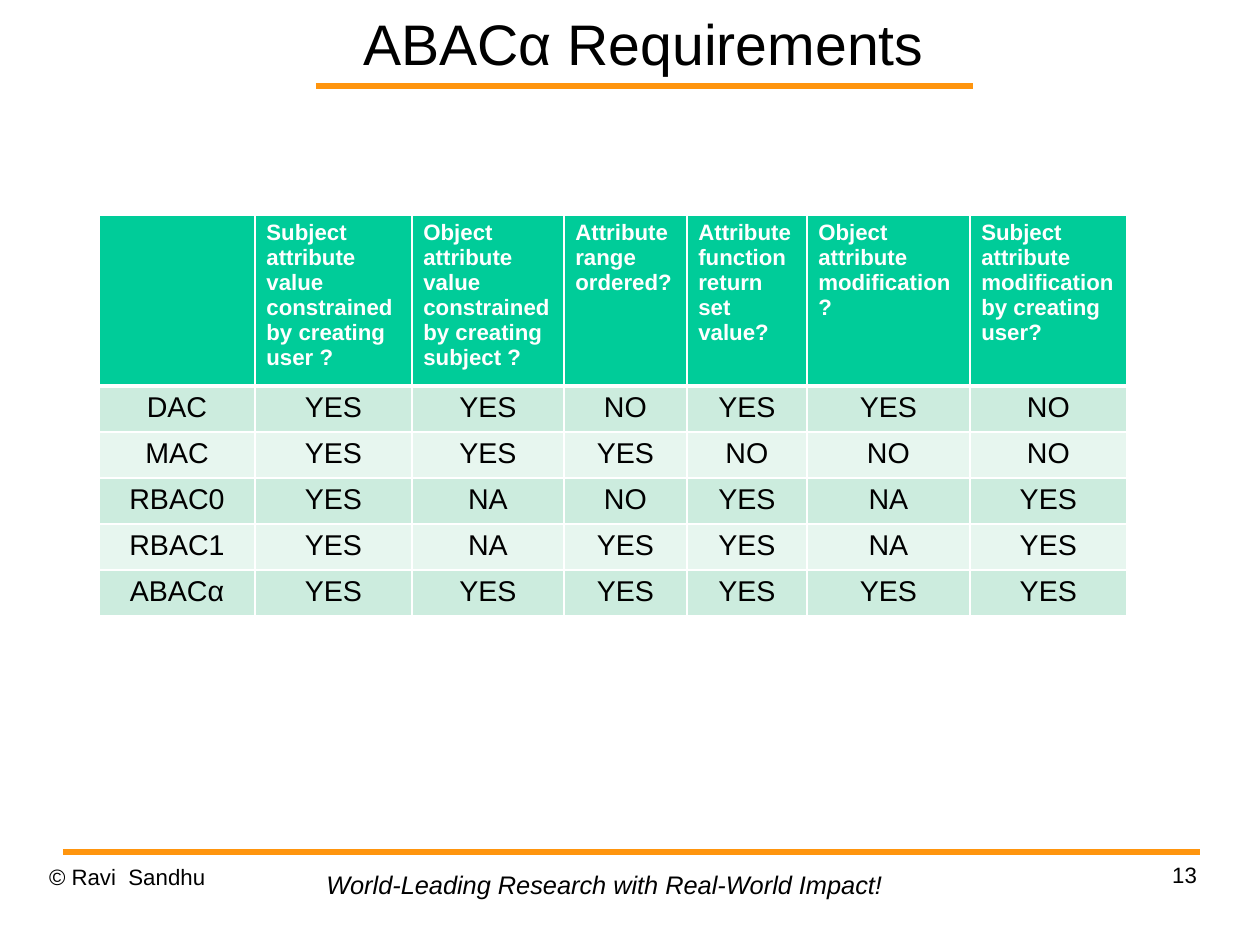
import dataclasses

import lxml.etree
import pptx
import pptx.dml.color
import pptx.enum.shapes
import pptx.enum.text
import pptx.oxml.ns
import pptx.util

PX = 8000
ALIGN = pptx.enum.text.PP_ALIGN
ANCHOR = pptx.enum.text.MSO_ANCHOR
AUTO_SIZE = pptx.enum.text.MSO_AUTO_SIZE


@dataclasses.dataclass(frozen=True)
class Theme:
    font: str = "Arial"
    ink: str = "000000"
    white: str = "FFFFFF"
    rule: str = "FF950E"
    header: str = "00CC99"
    bands: tuple = ("CCECDE", "E7F6EF")
    title_size: int = 36
    body_size: int = 18
    motto_size: int = 16
    small_size: int = 14
    rule_width: float = 4.31


THEME = Theme()
NO_INSETS = dict(margin_left=0, margin_top=0, margin_right=0, margin_bottom=0)

QUESTIONS = [
    "",
    "Subject attribute\nvalue constrained by creating user ?",
    "Object attribute value constrained by creating subject ?",
    "Attribute range ordered?",
    "Attribute function return set value?",
    "Object attribute modification?",
    "Subject attribute modification by creating user?",
]
MODELS = [
    ["DAC", "YES", "YES", "NO", "YES", "YES", "NO"],
    ["MAC", "YES", "YES", "YES", "NO", "NO", "NO"],
    ["RBAC0", "YES", "NA", "NO", "YES", "NA", "YES"],
    ["RBAC1", "YES", "NA", "YES", "YES", "NA", "YES"],
    ["ABACα", "YES", "YES", "YES", "YES", "YES", "YES"],
]
COLUMN_WIDTHS = [156, 157, 152, 123, 120, 163, 157]
HEADER_HEIGHT = 171
MODEL_HEIGHT = 46


def apply(target, formats):
    for name, value in formats.items():
        setattr(target, name, value)


def rgb(color):
    return pptx.dml.color.RGBColor.from_string(color)


def write(frame, text, size, color=THEME.ink, bold=False, italic=False, **paragraph_formats):
    frame.text = text
    for paragraph in frame.paragraphs:
        apply(paragraph, paragraph_formats)
        apply(paragraph.font, dict(name=THEME.font, size=pptx.util.Pt(size), bold=bold, italic=italic))
        paragraph.font.color.rgb = rgb(color)


def add_rule(slide, left, top, width):
    rule = slide.shapes.add_connector(
        pptx.enum.shapes.MSO_CONNECTOR.STRAIGHT, left * PX, top * PX, (left + width) * PX, top * PX)
    rule.line.color.rgb = rgb(THEME.rule)
    rule.line.width = pptx.util.Pt(THEME.rule_width)
    lxml.etree.SubElement(rule._element.spPr, pptx.oxml.ns.qn("a:effectLst"))


def add_label(slide, box, text, size, frame_formats, **formats):
    label = slide.shapes.add_textbox(*(length * PX for length in box))
    apply(label.text_frame, frame_formats)
    write(label.text_frame, text, size, **formats)


def add_heading(slide, left, top, width, height):
    title = slide.shapes.title
    apply(title, dict(left=left * PX, top=top * PX, width=width * PX, height=height * PX))
    apply(title.text_frame, dict(NO_INSETS, word_wrap=True, auto_size=AUTO_SIZE.NONE,
                                 vertical_anchor=ANCHOR.MIDDLE))
    write(title.text_frame, "ABACα Requirements", THEME.title_size, alignment=ALIGN.CENTER)
    add_rule(slide, left + 40, top + height, 657)


def add_border(cell, side, width):
    qn = pptx.oxml.ns.qn
    border = lxml.etree.SubElement(
        cell._tc.get_or_add_tcPr(), qn(f"a:ln{side}"), w=str(pptx.util.Pt(width)))
    fill = lxml.etree.SubElement(border, qn("a:solidFill"))
    lxml.etree.SubElement(fill, qn("a:srgbClr"), val=THEME.white)


def add_requirements(slide, left, top):
    rows = [QUESTIONS] + MODELS
    heights = [HEADER_HEIGHT] + [MODEL_HEIGHT] * len(MODELS)
    table = slide.shapes.add_table(
        len(rows), len(QUESTIONS), left * PX, top * PX,
        sum(COLUMN_WIDTHS) * PX, sum(heights) * PX).table
    for column, width in zip(table.columns, COLUMN_WIDTHS):
        column.width = width * PX
    for index, (answers, height) in enumerate(zip(rows, heights)):
        table.rows[index].height = height * PX
        is_header = index == 0
        background = THEME.header if is_header else THEME.bands[(index - 1) % 2]
        if is_header:
            formats = dict(size=THEME.small_size, color=THEME.white, bold=True)
        else:
            formats = dict(size=THEME.body_size, alignment=ALIGN.CENTER)
        borders = dict(L=1, R=1, T=3 if index == 1 else 1, B=3 if is_header else 1)
        for cell, answer in zip(table.rows[index].cells, answers):
            for side, width in borders.items():
                add_border(cell, side, width)
            cell.fill.solid()
            cell.fill.fore_color.rgb = rgb(background)
            write(cell.text_frame, answer, **formats)


def add_footer(slide, left, top, width):
    add_rule(slide, left + 14, top, 1137)
    side_width, side_height = 294, 65
    side_frame = dict(NO_INSETS, word_wrap=True)
    add_label(slide, (left, top + 11, side_width, side_height), "© Ravi  Sandhu",
              THEME.small_size, side_frame, line_spacing=1.01)
    add_label(slide, (left + 266, top + 11, 581, 42),
              "World-Leading Research with Real-World Impact!", THEME.motto_size,
              dict(word_wrap=False, auto_size=AUTO_SIZE.SHAPE_TO_FIT_TEXT), italic=True)
    add_label(slide, (left + width - side_width, top + 9, side_width, side_height), "13",
              THEME.small_size, side_frame, alignment=ALIGN.RIGHT, line_spacing=1.01)


def main():
    deck = pptx.Presentation()
    apply(deck, dict(slide_width=1260 * PX, slide_height=945 * PX))
    slide = deck.slides.add_slide(deck.slide_layouts[5])
    add_heading(slide, 276, 0, 735, 86)
    add_requirements(slide, 99, 215)
    add_footer(slide, 49, 852, 1148)
    deck.save("out.pptx")


if __name__ == "__main__":
    main()
